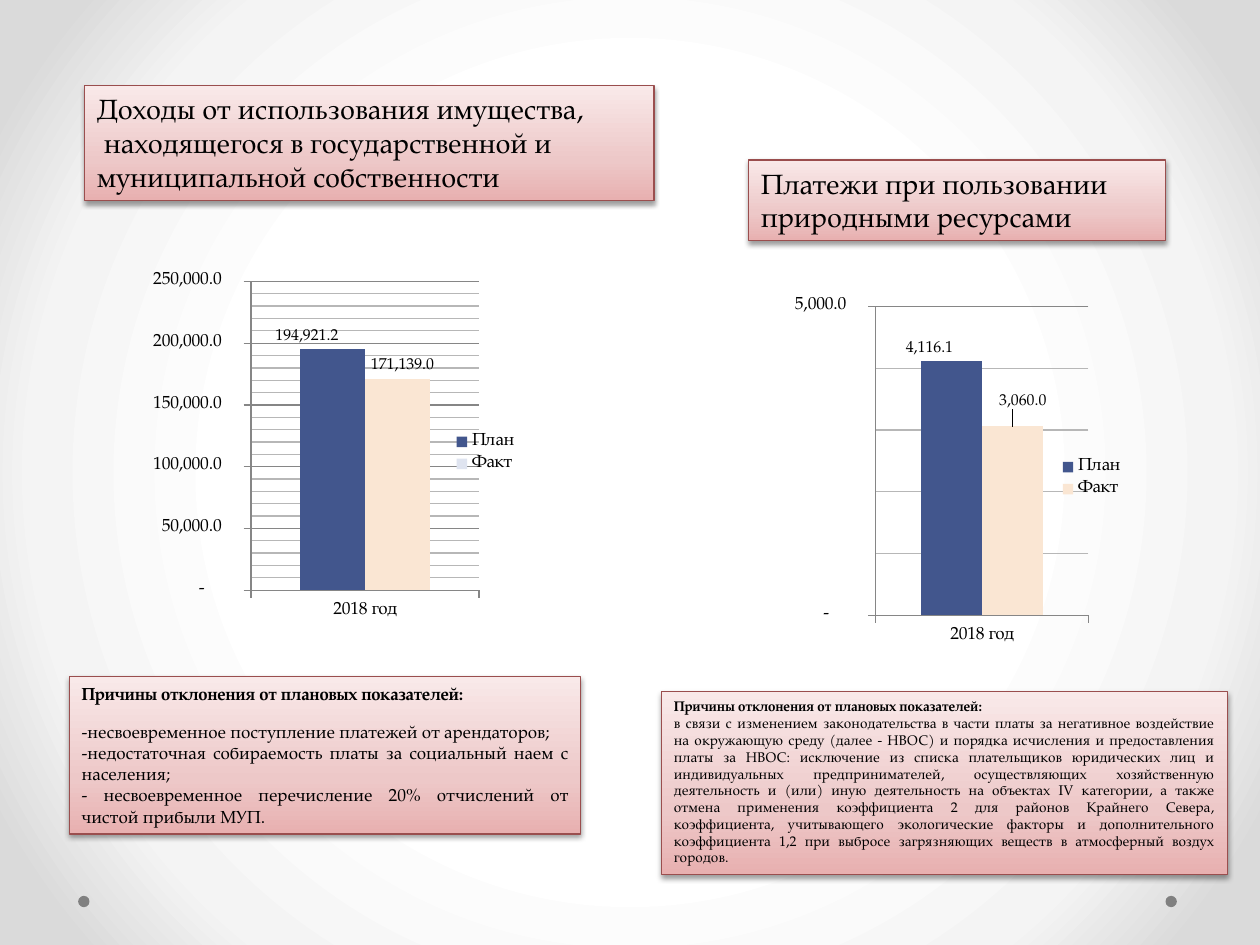
from lxml import etree
from pptx import Presentation
from pptx.chart.data import CategoryChartData
from pptx.dml.color import RGBColor
from pptx.enum.chart import XL_CHART_TYPE as ChartType, XL_LABEL_POSITION as LabelPosition
from pptx.enum.chart import XL_LEGEND_POSITION as LegendPosition, XL_TICK_MARK as TickMark
from pptx.enum.shapes import MSO_SHAPE as Shape
from pptx.enum.text import MSO_ANCHOR as Anchor, MSO_AUTO_SIZE as AutoSize, PP_ALIGN as Align
from pptx.oxml import parse_xml
from pptx.oxml.ns import nsdecls, qn
from pptx.util import Inches, Pt

FONT = "TeX Gyre Pagella"
NUMBER_FORMAT = '_-* #,##0.0_р_._-;\\-* #,##0.0_р_._-;_-* "-"??_р_._-;_-@_-'
PLAN, FACT, FACT_KEY = "42568D", "FAE6D3", "DFE4F0"
PINK = [(0, "E8B0B0"), (35, "EDC8C8"), (100, "F9E9E9")]
BACKDROP = [(50, "FFFFFF"), (76, "F4F4F4"), (92, "DADADA")]
UPWARD = '<a:lin ang="16200000" scaled="0"/>'
RADIAL = ('<a:path path="circle"><a:fillToRect l="50000" t="50000" '
          'r="50000" b="50000"/></a:path>')


def color(value):
    return RGBColor.from_string(value)


def set_gradient(fill, element, stops, direction):
    """Fill with any number of stops; direction is the closing XML of the gradient."""
    fill.gradient()
    old = next(element.iter(qn("a:gradFill")))
    marks = "".join(f'<a:gs pos="{at * 1000}"><a:srgbClr val="{value}"/></a:gs>'
                    for at, value in stops)
    old.getparent().replace(old, parse_xml(
        f'<a:gradFill {nsdecls("a")} rotWithShape="1"><a:gsLst>{marks}</a:gsLst>'
        f'{direction}</a:gradFill>'))


def set_layout(parent, index, x, y, size=None):
    """Insert a chart layout: an offset, or a full inner frame when size is given."""
    layout = etree.Element(qn("c:layout"))
    manual = etree.SubElement(layout, qn("c:manualLayout"))
    parts = [("x", x), ("y", y)]
    if size:
        parts = [("layoutTarget", "inner"), ("xMode", "edge"), ("yMode", "edge"),
                 *parts, ("w", size[0]), ("h", size[1])]
    for name, value in parts:
        etree.SubElement(manual, qn(f"c:{name}")).set("val", str(value))
    for old in parent.findall(qn("c:layout")):
        parent.remove(old)
    parent.insert(index, layout)


class Builder:
    def __init__(self, page):
        self.page = page

    def backdrop(self):
        set_gradient(self.page.background.fill, self.page.element, BACKDROP, RADIAL)

    def dot(self, left, top):
        dot = self.page.shapes.add_shape(Shape.OVAL, Inches(left), Inches(top),
                                         Inches(0.09), Inches(0.09))
        dot.shadow.inherit = False
        dot.fill.solid()
        dot.fill.fore_color.rgb = color("808080")
        dot.line.fill.background()

    def panel(self, left, top, width, height, size, lines, title=None, gap=0, wrap=True):
        """Pink box; a bold title may stand above justified lines."""
        box = self.page.shapes.add_shape(Shape.RECTANGLE, Inches(left), Inches(top),
                                         Inches(width), Inches(height))
        set_gradient(box.fill, box.element.spPr, PINK, UPWARD)
        box.line.color.rgb = color("9A4E4E")
        box.line.width = Pt(0.75)
        box.shadow.inherit = False
        box.element.spPr.find(qn("a:effectLst")).append(parse_xml(
            f'<a:outerShdw {nsdecls("a")} blurRad="{Pt(3.1)}" dist="{Pt(1.6)}" '
            'dir="5400000" rotWithShape="0"><a:srgbClr val="000000">'
            '<a:alpha val="38000"/></a:srgbClr></a:outerShdw>'))
        frame = box.text_frame
        frame.word_wrap = wrap
        frame.auto_size = AutoSize.SHAPE_TO_FIT_TEXT
        frame.vertical_anchor = Anchor.TOP
        texts = [title, *lines] if title else lines
        for number, text in enumerate(texts):
            para = frame.add_paragraph() if number else frame.paragraphs[0]
            is_title = text == title
            para.alignment = Align.JUSTIFY if title and not is_title else Align.LEFT
            if is_title:
                para.space_after = Pt(gap)
            span = para.add_run()
            span.text = text
            self.style_font(span.font, size)
            span.font.bold = is_title

    def style_font(self, font, size):
        font.name = FONT
        font.size = Pt(size)
        font.color.rgb = color("000000")

    def columns(self, left, top, width, height, plan, fact, top_value, step,
                offsets, fact_key=FACT):
        """Plan against fact; offsets move each value label by parts of the chart."""
        data = CategoryChartData(number_format=NUMBER_FORMAT)
        data.categories = ["2018 год"]
        data.add_series("План", [plan])
        data.add_series("Факт", [fact])
        chart = self.page.shapes.add_chart(
            ChartType.COLUMN_CLUSTERED, Inches(left), Inches(top),
            Inches(width), Inches(height), data).chart
        self.style_font(chart.font, 18)
        chart.has_title = False
        chart.has_legend = True
        chart.legend.position = LegendPosition.RIGHT
        chart.legend.include_in_layout = False
        self.style_font(chart.legend.font, 10)
        set_layout(next(chart.element.iter(qn("c:plotArea"))), 0, 0.359, 0.068,
                   (0.523, 0.778))

        values = chart.value_axis
        for axis in (chart.category_axis, values):
            axis.major_tick_mark = TickMark.OUTSIDE
            axis.minor_tick_mark = TickMark.NONE
            axis.format.line.color.rgb = color("868686")
            self.style_font(axis.tick_labels.font, 10)
        values.minimum_scale, values.maximum_scale = 0, top_value
        values.major_unit, values.minor_unit = step, step / 5
        values.tick_labels.number_format = NUMBER_FORMAT
        values.tick_labels.number_format_is_linked = False
        values.has_major_gridlines = values.has_minor_gridlines = True
        values.major_gridlines.format.line.color.rgb = color("868686")
        next(chart.element.iter(qn("c:minorGridlines"))).append(parse_xml(
            f'<c:spPr {nsdecls("c", "a")}><a:ln><a:solidFill>'
            '<a:srgbClr val="B7B7B7"/></a:solidFill></a:ln></c:spPr>'))

        plot = chart.plots[0]
        plot.gap_width, plot.overlap, plot.vary_by_categories = 150, 0, False
        for series, key, shade, offset in zip(plot.series, (PLAN, fact_key),
                                              (PLAN, FACT), offsets):
            series.invert_if_negative = False
            series.format.fill.solid()
            series.format.fill.fore_color.rgb = color(key)
            point = series.points[0]
            if shade != key:
                point.format.fill.solid()
                point.format.fill.fore_color.rgb = color(shade)
            labels = series.data_labels
            labels.show_value = True
            labels.number_format = NUMBER_FORMAT
            labels.number_format_is_linked = False
            self.style_font(labels.font, 9)
            label = point.data_label
            self.style_font(label.font, 9)
            label.position = LabelPosition.OUTSIDE_END
            mark = next(chart.element.iter(qn("c:dLbl"))) if key == PLAN else \
                list(chart.element.iter(qn("c:dLbl")))[-1]
            set_layout(mark, 1, *offset)
            mark.insert(2, etree.Element(qn("c:numFmt"), formatCode=NUMBER_FORMAT,
                                         sourceLinked="0"))


def main():
    deck = Presentation()
    deck.slide_width, deck.slide_height = Inches(10), Inches(7.5)
    build = Builder(deck.slides.add_slide(deck.slide_layouts[6]))
    reasons = "Причины отклонения от плановых показателей:"

    build.backdrop()
    for left in (9.25, 0.62):
        build.dot(left, 7.11)

    build.panel(0.67, 0.68, 4.52, 0.91, 16, [
        "Доходы от использования имущества,",
        " находящегося в государственной и",
        "муниципальной собственности"], wrap=False)
    build.columns(0.75, 2.02, 3.46, 3.15, 194921.2, 171139, 250000, 50000,
                  [(-0.045, 0), (0.025, 0)], fact_key=FACT_KEY)
    build.panel(0.55, 5.37, 4.06, 1.25, 10, [
        "-несвоевременное поступление платежей от арендаторов;",
        "-недостаточная собираемость платы за социальный наем с населения;",
        "- несвоевременное перечисление 20% отчислений от чистой прибыли МУП."],
        title=reasons, gap=10)

    build.panel(5.94, 1.27, 3.31, 0.64, 16,
                ["Платежи при пользовании природными ресурсами"])
    build.columns(5.79, 2.22, 3.23, 3.15, 4116.1, 3060, 5000, 5000,
                  [(-0.04, 0), (0.04, -0.03)])
    build.panel(5.25, 5.49, 4.49, 1.45, 8, [
        "в связи с изменением законодательства в части платы за негативное воздействие "
        "на окружающую среду (далее - НВОС) и порядка исчисления и предоставления платы "
        "за НВОС: исключение из списка плательщиков юридических лиц и индивидуальных "
        "предпринимателей, осуществляющих хозяйственную деятельность и (или) иную "
        "деятельность на объектах IV категории, а также отмена применения коэффициента 2 "
        "для районов Крайнего Севера, коэффициента, учитывающего экологические факторы и "
        "дополнительного коэффициента 1,2 при выбросе загрязняющих веществ в атмосферный "
        "воздух городов."], title=reasons)
    deck.save("out.pptx")


if __name__ == "__main__":
    main()
